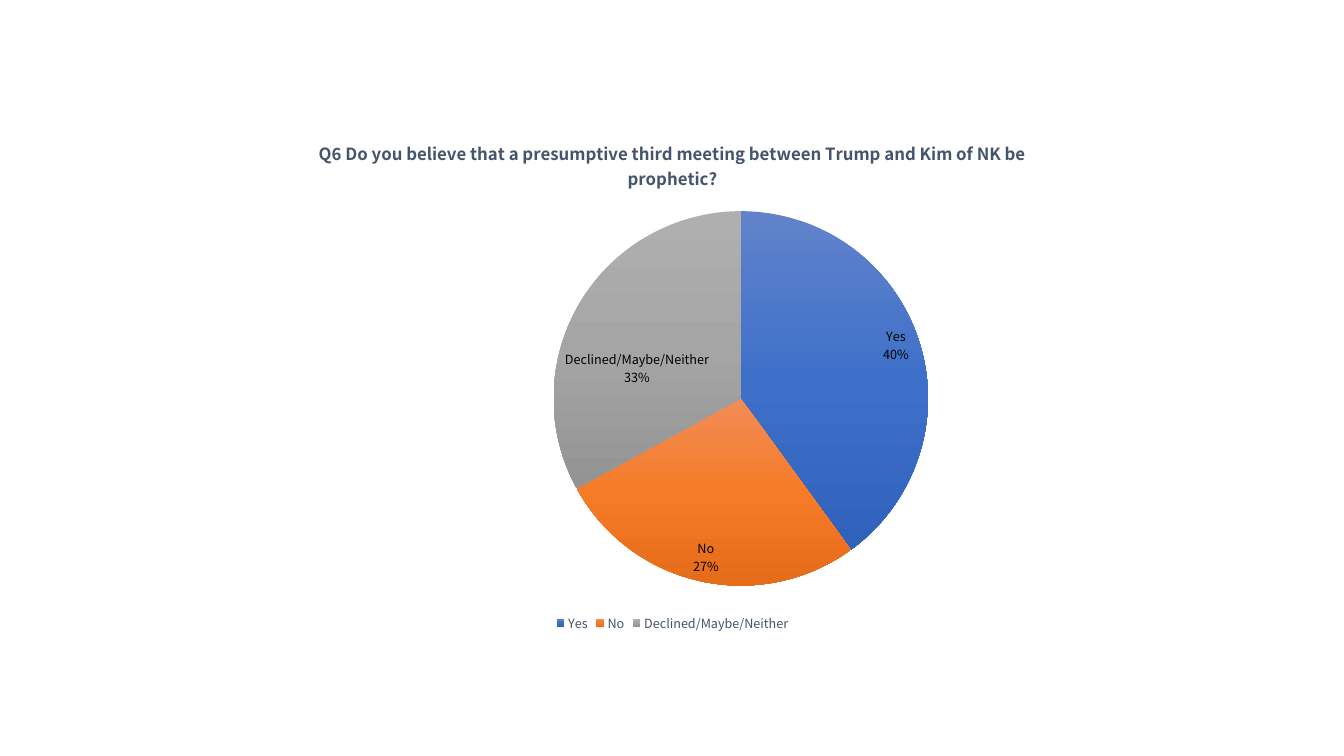
from lxml import etree
from pptx import Presentation
from pptx.chart.data import CategoryChartData
from pptx.dml.color import RGBColor
from pptx.enum.chart import XL_CHART_TYPE as ChartType
from pptx.enum.chart import XL_LABEL_POSITION as LabelPosition
from pptx.enum.chart import XL_LEGEND_POSITION as LegendPosition
from pptx.oxml import parse_xml
from pptx.oxml.ns import nsdecls, qn
from pptx.util import Cm, Pt

QUESTION = ("Q6 Do you believe that a presumptive third meeting between "
            "Trump and Kim of NK be prophetic?")
ANSWERS = {
    "Yes": (40, ["6183CB", "3E70CA", "3062BB"]),
    "No": (27, ["F18C57", "F67B28", "E56C19"]),
    "Declined/Maybe/Neither": (33, ["AFAFAF", "A5A5A5", "939393"]),
}
PLOT_AREA = {"x": 0.37, "y": 0.17, "w": 0.41, "h": 0.74}


def style_font(font, size, color, bold=False):
    formats = {"name": "Noto Sans CJK KR", "size": Pt(size), "bold": bold}
    for name, value in formats.items():
        setattr(font, name, value)
    font.color.rgb = RGBColor.from_string(color)


def fill_downwards(slice_format, colors):
    """Fill a slice with evenly spaced colours from top to bottom."""
    fill = slice_format.fill
    fill.gradient()
    fill.gradient_angle = 270
    stops = slice_format._element.find(".//" + qn("a:gsLst")) if hasattr(
        slice_format, "_element") else fill.gradient_stops._gsLst
    for stop in list(stops):
        stops.remove(stop)
    for index, color in enumerate(colors):
        position = 100000 * index // (len(colors) - 1)
        stops.append(parse_xml(
            f'<a:gs {nsdecls("a")} pos="{position}">'
            f'<a:srgbClr val="{color}"/></a:gs>'))


deck = Presentation()
deck.slide_width, deck.slide_height = Cm(33.87), Cm(19.05)
page = deck.slides.add_slide(deck.slide_layouts[6])

survey = CategoryChartData(number_format="0")
survey.categories = list(ANSWERS)
survey.add_series(QUESTION, [value for value, _ in ANSWERS.values()])
chart = page.shapes.add_chart(
    ChartType.PIE, Cm(5.44), Cm(3.02), Cm(23.01), Cm(13), survey).chart
style_font(chart.font, 10, "000000")

chart.has_title = True
title = chart.chart_title
title.include_in_layout = False
title.text_frame.text = QUESTION
style_font(title.text_frame.paragraphs[0].runs[0].font, 12, "44546A", bold=True)

chart.has_legend = True
legend = chart.legend
legend.position = LegendPosition.BOTTOM
legend.include_in_layout = False
style_font(legend.font, 9, "44546A")

pie = chart.plots[0]
pie.vary_by_categories = True
for index, (_, colors) in enumerate(ANSWERS.values()):
    fill_downwards(pie.series[0].points[index].format, colors)

pie.has_data_labels = True
labels = pie.data_labels
label_formats = {
    "show_category_name": True,
    "show_percentage": True,
    "show_value": False,
    "number_format": "0%",
    "number_format_is_linked": False,
    "position": LabelPosition.BEST_FIT,
}
for name, value in label_formats.items():
    setattr(labels, name, value)
style_font(labels.font, 9, "000000")
separator = etree.Element(qn("c:separator"))
separator.text = "\n"
labels._element.find(qn("c:showBubbleSize")).addnext(separator) if (
    labels._element.find(qn("c:showBubbleSize")) is not None
) else labels._element.find(qn("c:showPercent")).addnext(separator)

plot_area = chart._chartSpace.chart.plotArea
for old_layout in plot_area.findall(qn("c:layout")):
    plot_area.remove(old_layout)
sides = "".join(f'<c:{side} val="{share}"/>' for side, share in PLOT_AREA.items())
plot_area.insert(0, parse_xml(
    f'<c:layout {nsdecls("c")}><c:manualLayout><c:layoutTarget val="inner"/>'
    f'<c:xMode val="edge"/><c:yMode val="edge"/>{sides}'
    '</c:manualLayout></c:layout>'))

deck.save("out.pptx")
